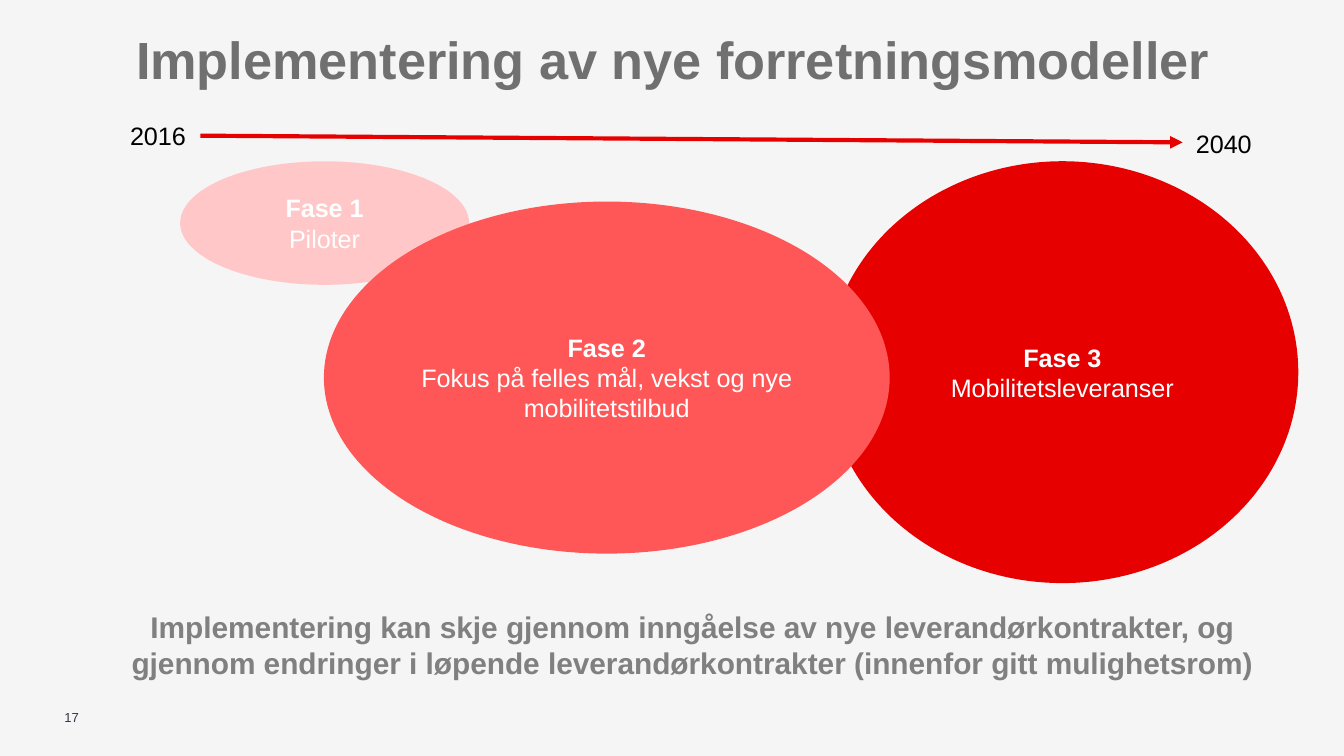
import pptx
import pptx.dml.color
import pptx.enum.shapes
import pptx.enum.text
import pptx.oxml.ns
import pptx.util
from lxml import etree

Pt = pptx.util.Pt
CENTER = pptx.enum.text.PP_ALIGN.CENTER
LEFT = pptx.enum.text.PP_ALIGN.LEFT
MIDDLE = pptx.enum.text.MSO_ANCHOR.MIDDLE
TOP = pptx.enum.text.MSO_ANCHOR.TOP

RED = "E60000"
PHASES = [
    ("Fase 1", "Piloter", "FFC7C7", (96.5, 86.4, 154.8, 66.2)),
    ("Fase 3", "Mobilitetsleveranser", RED, (442.8, 86.4, 252.7, 226)),
    ("Fase 2", "Fokus på felles mål, vekst og nye mobilitetstilbud", "FF5757",
     (173.5, 108, 303.1, 188.6)),
]


def color(hex_string):
    return pptx.dml.color.RGBColor.from_string(hex_string)


def points(box):
    return [Pt(value) for value in box]


def format_paragraph(paragraph, size, hex_string, bold=False, alignment=LEFT):
    paragraph.alignment = alignment
    font = paragraph.font
    font.name = "Arial"
    font.size = Pt(size)
    font.bold = bold
    font.color.rgb = color(hex_string)


def set_frame(frame, anchor, has_margins=True):
    frame.word_wrap = True
    frame.auto_size = pptx.enum.text.MSO_AUTO_SIZE.NONE
    frame.vertical_anchor = anchor
    frame.margin_left = frame.margin_right = Pt(7.2 if has_margins else 0)
    frame.margin_top = frame.margin_bottom = Pt(3.6 if has_margins else 0)


def set_title(slide, text, box):
    title = slide.shapes.title
    title.left, title.top, title.width, title.height = points(box)
    set_frame(title.text_frame, MIDDLE, has_margins=False)
    title.text_frame.text = text
    format_paragraph(title.text_frame.paragraphs[0], 28, "707070", True, CENTER)


def add_text(slide, text, box, size, hex_string, bold=False, alignment=LEFT,
             anchor=TOP, has_margins=True):
    frame = slide.shapes.add_textbox(*points(box)).text_frame
    set_frame(frame, anchor, has_margins)
    frame.text = text
    format_paragraph(frame.paragraphs[0], size, hex_string, bold, alignment)


def add_phase(slide, name, description, fill, box):
    shape = slide.shapes.add_shape(
        pptx.enum.shapes.MSO_SHAPE.OVAL, *points(box))
    shape.shadow.inherit = False
    shape.fill.solid()
    shape.fill.fore_color.rgb = color(fill)
    shape.line.fill.background()
    frame = shape.text_frame
    set_frame(frame, MIDDLE)
    frame.text = f"{name}\n{description}"
    for paragraph, bold in zip(frame.paragraphs, (True, False)):
        format_paragraph(paragraph, 13.5, "FFFFFF", bold, CENTER)


def add_arrow(slide, ends, hex_string, width):
    connector = slide.shapes.add_connector(
        pptx.enum.shapes.MSO_CONNECTOR.STRAIGHT, *points(ends))
    connector.line.color.rgb = color(hex_string)
    connector.line.width = Pt(width)
    qn = pptx.oxml.ns.qn
    properties = connector._element.spPr
    etree.SubElement(properties.find(qn("a:ln")), qn("a:tailEnd"), type="triangle")
    etree.SubElement(properties, qn("a:effectLst"))


def main():
    presentation = pptx.Presentation()
    presentation.slide_width = Pt(720)
    presentation.slide_height = Pt(405)
    slide = presentation.slides.add_slide(presentation.slide_layouts[5])
    slide.background.fill.solid()
    slide.background.fill.fore_color.rgb = color("F5F5F5")

    set_title(slide, "Implementering av nye forretningsmodeller",
              (46, 14.4, 628.6, 33.8))
    add_text(slide, "17", (34.5, 380.2, 11.5, 8.6), 7, "32374B",
             anchor=MIDDLE, has_margins=False)
    for phase in PHASES:
        add_phase(slide, *phase)
    add_text(slide, "Implementering kan skje gjennom inngåelse av nye "
             "leverandørkontrakter, og gjennom endringer i løpende "
             "leverandørkontrakter (innenfor gitt mulighetsrom)",
             (46, 322.6, 650.2, 46), 16, "808080", True, CENTER)
    add_arrow(slide, (107.3, 72.7, 633.6, 76.3), RED, 2.25)
    for year, left, top in (("2016", 62.6, 61.2), ("2040", 633.6, 65.2)):
        add_text(slide, year, (left, top, 67, 23.8), 13.5, "000000")

    presentation.save("out.pptx")


if __name__ == "__main__":
    main()
